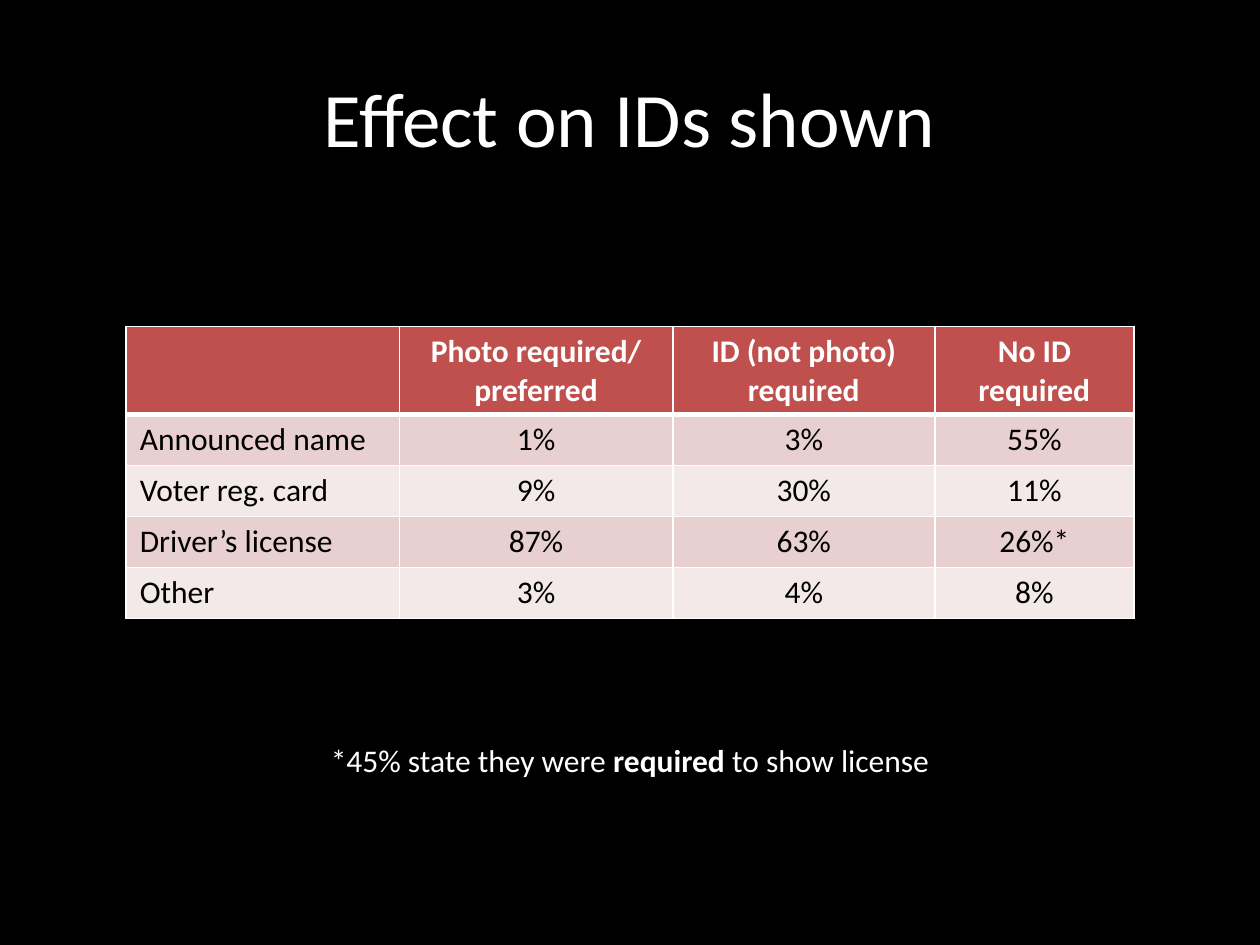
"""Build a slide with a table of IDs shown under three voter ID rules."""
from lxml.etree import SubElement
from pptx import Presentation
from pptx.dml.color import RGBColor
from pptx.enum.text import MSO_ANCHOR, PP_ALIGN
from pptx.oxml.ns import qn
from pptx.util import Inches, Pt

THEME = dict(font="Calibri", title=44, body=18, bg="000000", light="FFFFFF",
             dark="000000", header="C0504D", bands=("E8D0D0", "F4E9E9"),
             thin=1, thick=3)
ROWS = [
    ("", "Photo required/ preferred", "ID (not photo) required", "No ID required"),
    ("Announced name", "1%", "3%", "55%"),
    ("Voter reg. card", "9%", "30%", "11%"),
    ("Driver’s license", "87%", "63%", "26%*"),
    ("Other", "3%", "4%", "8%"),
]
COL_WIDTHS = (2.17, 2.17, 2.08, 1.58)
ROW_HEIGHTS = (0.7,) + (0.405,) * 4


def style(p, size, color, align=PP_ALIGN.CENTER):
    p.alignment = align
    p.font.name, p.font.size = THEME["font"], Pt(size)
    p.font.color.rgb = RGBColor.from_string(color)


def add_border(cell, side, width):
    ln = SubElement(cell._tc.get_or_add_tcPr(), qn(f"a:ln{side}"), w=str(Pt(width)))
    fill = SubElement(ln, qn("a:solidFill"))
    SubElement(fill, qn("a:srgbClr"), val=THEME["light"])


prs = Presentation()
prs.slide_width, prs.slide_height = Inches(10), Inches(7.5)
W, H = prs.slide_width, prs.slide_height
s = prs.slides.add_slide(prs.slide_layouts[6])
s.background.fill.solid()
s.background.fill.fore_color.rgb = RGBColor.from_string(THEME["bg"])

tf = s.shapes.add_textbox(int(W * 0.05), int(H * 0.04), int(W * 0.9), Inches(1.25)).text_frame
tf.word_wrap = True
tf.vertical_anchor = MSO_ANCHOR.MIDDLE
p = tf.paragraphs[0]
p.text = "Effect on IDs shown"
style(p, THEME["title"], THEME["light"])

tf = s.shapes.add_textbox(int(W * 0.25), Inches(5.83), int(W * 0.5), Inches(0.4)).text_frame
tf.word_wrap = True
p = tf.paragraphs[0]
for text, bold in (("*45% state they were ", False), ("required", True), (" to show license", False)):
    r = p.add_run()
    r.text, r.font.bold = text, bold
style(p, THEME["body"], THEME["light"])

table = s.shapes.add_table(len(ROWS), len(COL_WIDTHS), int(W * 0.1), Inches(2.59),
                           int(W * 0.8), Inches(sum(ROW_HEIGHTS))).table
table.horz_banding = False
for col, width in zip(table.columns, COL_WIDTHS):
    col.width = Inches(width)
for i, (row, height, texts) in enumerate(zip(table.rows, ROW_HEIGHTS, ROWS)):
    row.height = Inches(height)
    header = i == 0
    thick_side = {0: "B", 1: "T"}.get(i)
    for j, (cell, text) in enumerate(zip(row.cells, texts)):
        for side in "LRTB":
            add_border(cell, side, THEME["thick" if side == thick_side else "thin"])
        cell.fill.solid()
        cell.fill.fore_color.rgb = RGBColor.from_string(
            THEME["header"] if header else THEME["bands"][(i - 1) % 2])
        cell.margin_left = cell.margin_right = Inches(0.11)
        cell.vertical_anchor = MSO_ANCHOR.BOTTOM if header else MSO_ANCHOR.TOP
        p = cell.text_frame.paragraphs[0]
        p.text = text
        style(p, THEME["body"], THEME["light" if header else "dark"],
              PP_ALIGN.CENTER if header or j else PP_ALIGN.LEFT)
        p.font.bold = header

prs.save("out.pptx")
